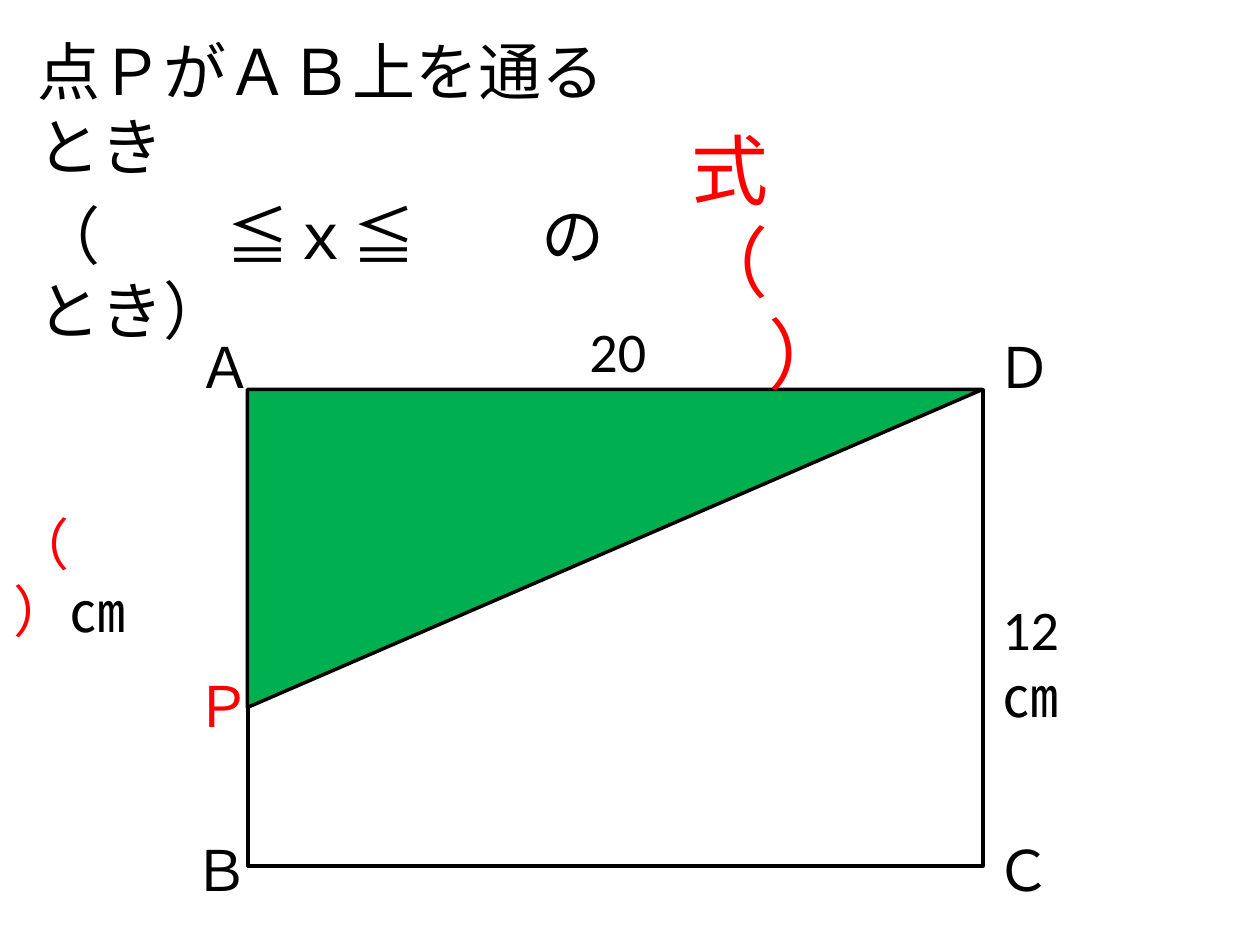
from dataclasses import dataclass

from lxml.etree import SubElement
from pptx import Presentation
from pptx.dml.color import RGBColor
from pptx.enum.shapes import MSO_SHAPE as Preset
from pptx.enum.text import MSO_AUTO_SIZE as AutoSize
from pptx.oxml.ns import qn
from pptx.util import Emu, Pt

SCALE = 914400 / 126
FONT = "Calibri"
BLACK = "000000"
RED = "FF0000"
GREEN = "00B050"


@dataclass(frozen=True)
class Box:
    """A rectangle in px."""

    left: int
    top: int
    width: int
    height: int

    def emu(self) -> tuple[Emu, ...]:
        """Return the four lengths in EMU."""
        return tuple(px(value) for value in (self.left, self.top, self.width, self.height))


@dataclass(frozen=True)
class Label:
    """A text box whose runs are pairs of text and colour."""

    box: Box
    runs: tuple[tuple[str, str], ...]
    size: int = 32


RECTANGLE = Box(248, 390, 735, 476)
AP_LENGTH = 318
TRIANGLE = Box(
    RECTANGLE.left + (RECTANGLE.width - AP_LENGTH) // 2,
    RECTANGLE.top + (AP_LENGTH - RECTANGLE.width) // 2,
    AP_LENGTH,
    RECTANGLE.width,
)
CONDITION = Box(25, 26, 635, 208)
CONDITION_LINES = ("点ＰがＡＢ上を通るとき", "（　　≦ｘ≦　　のとき）")

FIGURE_LABELS = (
    Label(Box(185, 326, 66, 81), (("Ａ", BLACK),)),
    Label(Box(183, 665, 66, 81), (("Ｐ", RED),)),
    Label(Box(984, 326, 68, 81), (("Ｄ", BLACK),)),
    Label(Box(983, 829, 68, 81), (("Ｃ", BLACK),)),
    Label(Box(181, 829, 69, 81), (("Ｂ", BLACK),)),
    Label(Box(577, 310, 134, 81), (("20㎝", BLACK),)),
    Label(Box(990, 588, 134, 81), (("12㎝", BLACK),)),
)
ANSWER_LABELS = (
    Label(Box(1, 503, 251, 81), (("（　　　）", RED), ("㎝", BLACK))),
    Label(Box(679, 116, 491, 106), (("式（　　　　　　）", RED),), 44),
)


def px(value: int) -> Emu:
    """Turn px into EMU."""
    return Emu(round(value * SCALE))


def rgb(value: str) -> RGBColor:
    """Turn a hex string into a colour."""
    return RGBColor.from_string(value)


def add_text(paragraph, text: str, *, size: int, color: str = BLACK) -> None:
    """Add a formatted run to a paragraph."""
    run = paragraph.add_run()
    run.text = text
    run.font.name = FONT
    run.font.size = Pt(size)
    run.font.color.rgb = rgb(color)


def add_label(slide, label: Label) -> None:
    """Draw a wrapped text box."""
    frame = slide.shapes.add_textbox(*label.box.emu()).text_frame
    frame.word_wrap = True
    frame.auto_size = AutoSize.SHAPE_TO_FIT_TEXT
    for text, color in label.runs:
        add_text(frame.paragraphs[0], text, size=label.size, color=color)


def add_figure(slide, preset: Preset, box: Box, fill: str | None = None, rotation: int = 0) -> None:
    """Draw an outlined preset shape."""
    shape = slide.shapes.add_shape(preset, *box.emu())
    shape.shadow.inherit = False
    shape.rotation = rotation
    shape.line.color.rgb = rgb(BLACK)
    shape.line.width = Pt(2)
    if fill:
        shape.fill.solid()
        shape.fill.fore_color.rgb = rgb(fill)
    else:
        shape.fill.background()


def fill_condition(slide) -> None:
    """Place the condition in the body placeholder, in front of the figure."""
    body = slide.placeholders[1]
    body.left, body.top, body.width, body.height = CONDITION.emu()
    frame = body.text_frame
    frame.word_wrap = True
    frame.auto_size = AutoSize.NONE
    for index, line in enumerate(CONDITION_LINES):
        paragraph = frame.add_paragraph() if index else frame.paragraphs[0]
        add_text(paragraph, line, size=36)
        properties = paragraph._p.get_or_add_pPr()
        properties.set("marL", "0")
        properties.set("indent", "0")
        SubElement(properties, qn("a:buNone"))
    body.element.getparent().append(body.element)


def main() -> None:
    """Build the slide and save it."""
    presentation = Presentation()
    presentation.slide_width = px(1260)
    presentation.slide_height = px(945)
    slide = presentation.slides.add_slide(presentation.slide_layouts[1])
    title = slide.shapes.title.element
    title.getparent().remove(title)

    add_figure(slide, Preset.RECTANGLE, RECTANGLE)
    for label in FIGURE_LABELS:
        add_label(slide, label)
    add_figure(slide, Preset.RIGHT_TRIANGLE, TRIANGLE, fill=GREEN, rotation=90)
    fill_condition(slide)
    for label in ANSWER_LABELS:
        add_label(slide, label)
    presentation.save("out.pptx")


if __name__ == "__main__":
    main()
